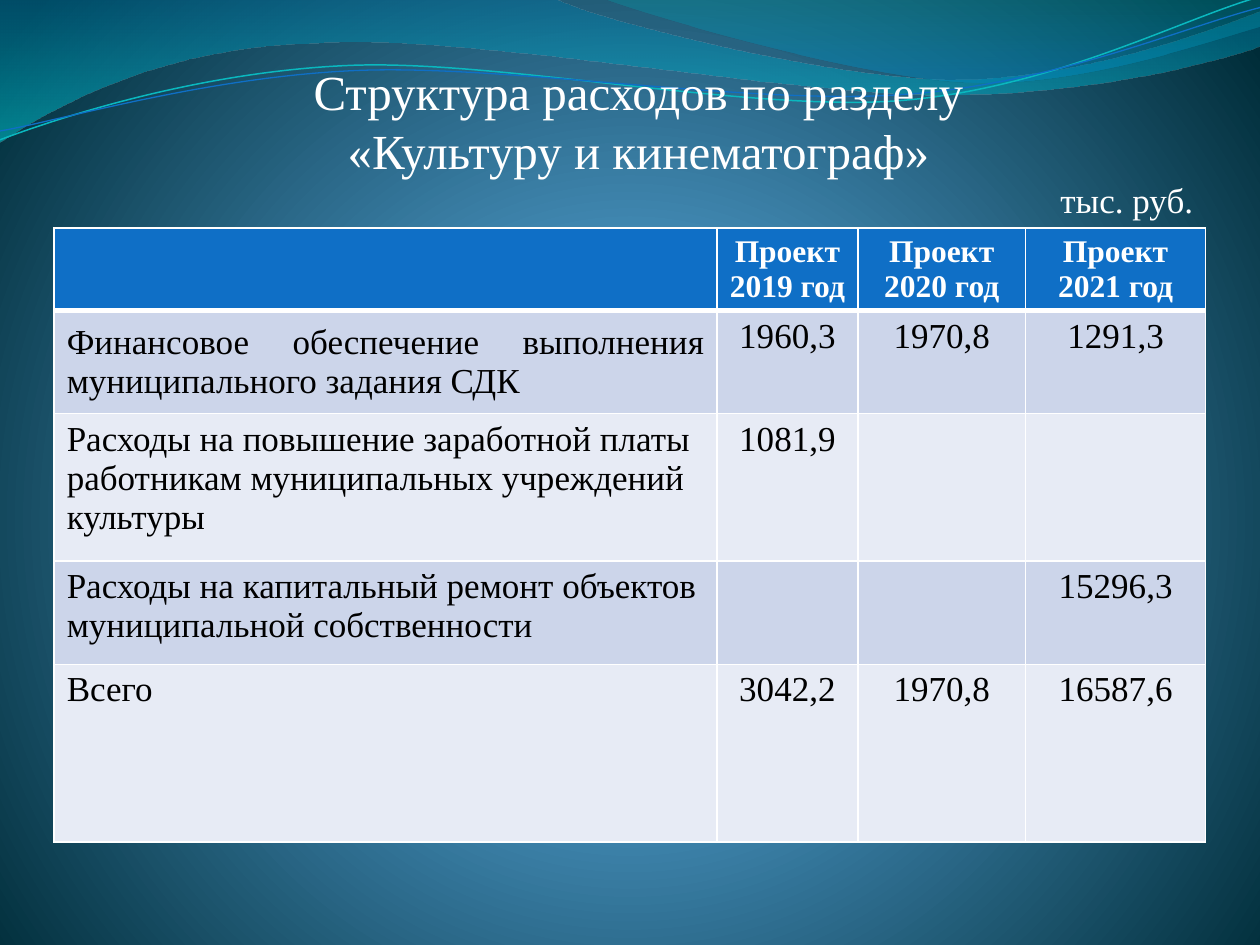
"""Build a slide with a table of culture spending by year."""
from pptx import Presentation
from pptx import oxml
from pptx import util as u
from pptx.dml.color import RGBColor
from pptx.enum import text as t
from pptx.oxml import ns

WHITE = RGBColor(0xFF, 0xFF, 0xFF)
BLACK = RGBColor(0, 0, 0)
BLUE = RGBColor(0x0F, 0x6F, 0xC6)
TEAL = RGBColor(0x0A, 0xB8, 0xBF)
DARK = RGBColor(0xCC, 0xD5, 0xEA)
PALE = RGBColor(0xE7, 0xEB, 0xF5)
FONT = "Times New Roman"
DOWN = '<a:lin ang="5400000" scaled="0"/>'
ROUND = ('<a:path path="circle"><a:fillToRect l="10000" t="110000" '
         'r="10000" b="100000"/></a:path>')


def shade(fill, root, stops, kind):
    """Replace a fill with a gradient of (position, colour, opacity) stops."""
    fill.background()
    old = next(root.iter(ns.qn("a:noFill")))
    gs = "".join(f'<a:gs pos="{pos * 1000}"><a:srgbClr val="{rgb}">'
                 f'<a:alpha val="{alpha * 1000}"/></a:srgbClr></a:gs>'
                 for pos, rgb, alpha in stops)
    new = oxml.parse_xml(f'<a:gradFill {ns.nsdecls("a")} rotWithShape="1">'
                         f'<a:gsLst>{gs}</a:gsLst>{kind}</a:gradFill>')
    old.getparent().replace(old, new)


def trace(steps, close):
    """Draw a freeform from points (2 numbers) and Bezier curves (6 numbers)."""
    pts = [(u.Inches(step[i]), u.Inches(step[i + 1]))
           for step in steps for i in range(0, len(step), 2)]
    pen = slide.shapes.build_freeform(*pts[0])
    pen.add_line_segments(pts[1:], close=close)
    shape = pen.convert_to_shape()
    shape.shadow.inherit = False
    lines = iter(list(shape.element.iter(ns.qn("a:lnTo"))))
    for step in steps[1:]:
        group = [next(lines) for _ in range(len(step) // 2)]
        if len(group) == 3:
            bend = oxml.parse_xml(f'<a:cubicBezTo {ns.nsdecls("a")}/>')
            group[0].addprevious(bend)
            for line in group:
                bend.append(line[0])
                line.getparent().remove(line)
    return shape


prs = Presentation()
prs.slide_width, prs.slide_height = u.Inches(10), u.Inches(7.5)
slide = prs.slides.add_slide(prs.slide_layouts[5])
shade(slide.background.fill, slide.element,
      [(0, "4AA0D6", 100), (25, "4C98C7", 100), (100, "002C38", 100)], ROUND)

waves = [
    ([(0, 0), (4.4, -0.01), (4.76, 0.17, 6.64, 0.63, 7.58, 0.63),
      (8.53, 0.63, 9.58, 0.26, 10, 0.09), (10.01, 0.36),
      (9.83, 0.44, 8.7, 0.76, 7.46, 0.75), (6.22, 0.75, 3.82, 0.28, 2.57, 0.34),
      (1.29, 0.36, 0.46, 0.83, -0.01, 1.13)],
     [(0, "0074A1", 45), (100, "00C6CF", 55)]),
    ([(4.79, -0.01), (5.09, 0.11, 6.82, 0.62, 7.69, 0.65),
      (8.56, 0.69, 9.61, 0.32, 10, 0.21), (10, 0)],
     [(0, "00A1A9", 30), (80, "008BBF", 45)]),
]
for steps, stops in waves:
    wave = trace(steps, True)
    wave.line.fill.background()
    shade(wave.fill, wave.element.spPr, stops, DOWN)

curves = [
    ([(0, 1.11), (0.48, 0.93, 1.58, 0.57, 2.77, 0.52),
      (3.95, 0.47, 5.93, 0.89, 7.13, 0.8), (8.33, 0.71, 9.38, 0.15, 9.98, -0.02)],
     TEAL, 0.85),
    ([(0, 1.04), (0.47, 0.96, 1.64, 0.61, 2.83, 0.56),
      (4.03, 0.51, 5.97, 0.84, 7.17, 0.75), (8.36, 0.67, 9.41, 0.21, 10, 0.06)],
     BLUE, 0.75),
]
for steps, color, width in curves:
    curve = trace(steps, False)
    curve.fill.background()
    curve.line.color.rgb = color
    curve.line.width = u.Pt(width)

rows = [
    ["", "Проект\v2019 год", "Проект\n2020 год", "Проект 2021 год"],
    ["Финансовое обеспечение выполнения муниципального задания СДК",
     "1960,3", "1970,8", "1291,3"],
    ["Расходы на повышение заработной платы работникам муниципальных "
     "учреждений культуры", "1081,9", "", ""],
    ["Расходы на капитальный ремонт объектов муниципальной собственности",
     "", "", "15296,3"],
    ["Всего", "3042,2", "1970,8", "16587,6"],
]
widths = [5.26, 1.12, 1.33, 1.43]
heights = [0.65, 0.82, 1.17, 0.82, 1.41]
table = slide.shapes.add_table(
    len(rows), len(widths), u.Inches(0.43), u.Inches(1.81),
    u.Inches(sum(widths)), u.Inches(sum(heights))).table
for col, width in zip(table.columns, widths):
    col.width = u.Inches(width)
for row, height in zip(table.rows, heights):
    row.height = u.Inches(height)

for r, row in enumerate(rows):
    for c, words in enumerate(row):
        cell = table.cell(r, c)
        cell.text = words
        for para in cell.text_frame.paragraphs:
            para.alignment = t.PP_ALIGN.CENTER if c else t.PP_ALIGN.LEFT
            para.font.name = FONT
            para.font.size = u.Pt(20 if r else 18)
            para.font.bold = r == 0
            para.font.color.rgb = BLACK if r else WHITE
        if r == 0:
            cell.vertical_anchor = t.MSO_ANCHOR.MIDDLE
        props = cell._tc.get_or_add_tcPr()
        for side in "LRTB":
            thick = 3 if (r, side) in ((0, "B"), (1, "T")) else 1
            props.append(oxml.parse_xml(
                f'<a:ln{side} {ns.nsdecls("a")} w="{u.Pt(thick)}"><a:solidFill>'
                f'<a:srgbClr val="{WHITE}"/></a:solidFill></a:ln{side}>'))
        cell.fill.solid()
        cell.fill.fore_color.rgb = BLUE if r == 0 else DARK if r % 2 else PALE
first = table.cell(1, 0)
first.vertical_anchor = t.MSO_ANCHOR.MIDDLE
first.text_frame.paragraphs[0].alignment = t.PP_ALIGN.JUSTIFY

title = slide.shapes.title
title.left, title.top = u.Inches(0.66), u.Inches(0.43)
title.width, title.height = u.Inches(8.91), u.Inches(1.38)
frame = title.text_frame
frame.text = "Структура расходов по разделу \n«Культуру и кинематограф» \nтыс. руб."
frame.word_wrap = True
frame.auto_size = t.MSO_AUTO_SIZE.NONE
frame.vertical_anchor = t.MSO_ANCHOR.MIDDLE
for para, size in zip(frame.paragraphs, (28, 28, 20)):
    para.alignment = t.PP_ALIGN.CENTER if size == 28 else t.PP_ALIGN.RIGHT
    para.font.name = FONT
    para.font.size = u.Pt(size)
    para.font.color.rgb = WHITE
slide.shapes._spTree.append(title.element)

prs.save("out.pptx")
